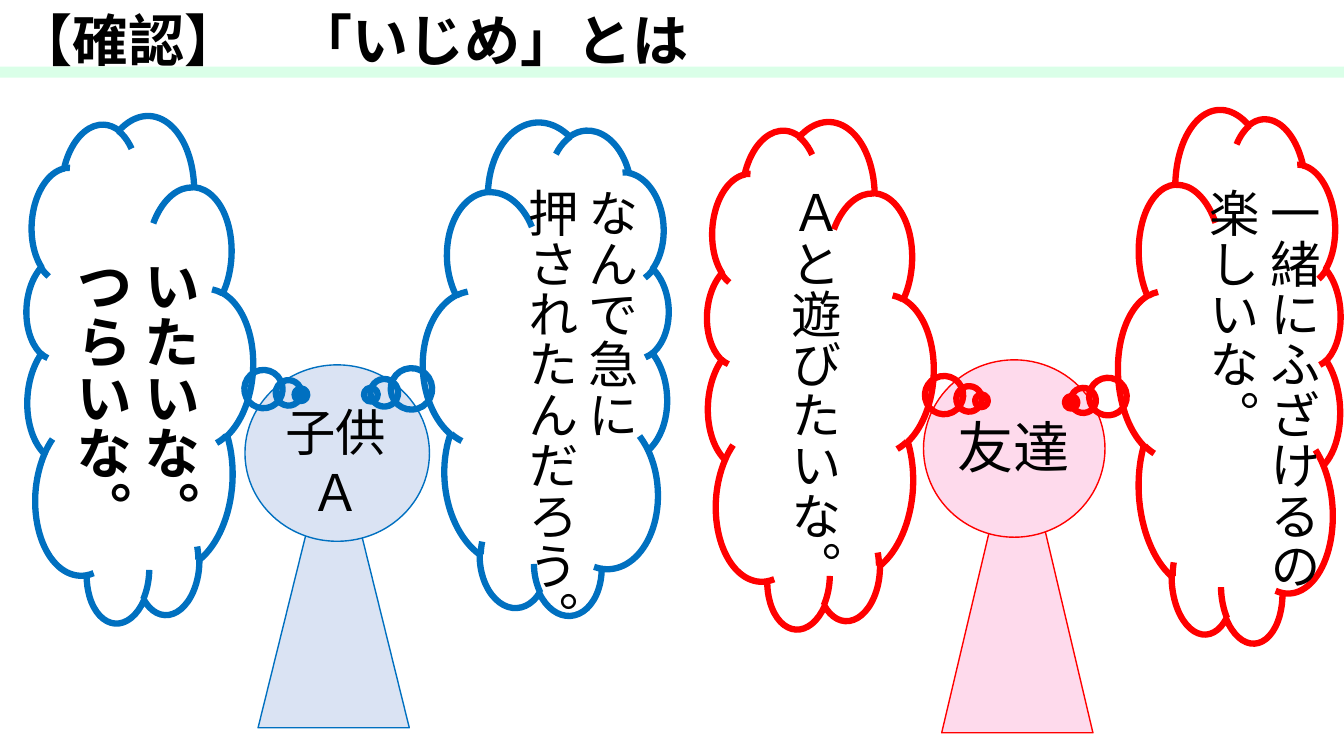
from dataclasses import dataclass

from lxml.etree import SubElement
from pptx import Presentation
from pptx.dml.color import RGBColor
from pptx.enum.shapes import MSO_SHAPE as Shape
from pptx.enum.text import MSO_ANCHOR as Anchor, MSO_AUTO_SIZE as AutoSize, PP_ALIGN as Align
from pptx.oxml.ns import qn
from pptx.util import Inches, Pt


@dataclass(frozen=True)
class Theme:
    font: str = "Noto Sans CJK JP"
    text: str = "000000"
    blue: str = "0070C0"
    pale_blue: str = "DAE3F3"
    red: str = "FF0000"
    pale_pink: str = "FEDAEC"
    band: str = "3BFF8A"
    band_opacity: int = 19
    large: int = 40
    medium: int = 36
    thin: float = 1
    thick: float = 4.5


class SlideBuilder:
    def __init__(self, deck, theme):
        self.theme = theme
        self.slide = deck.slides.add_slide(deck.slide_layouts[6])

    def shape(self, kind, at, fill=None, line=None, width=0):
        shape = self.slide.shapes.add_shape(kind, *map(Inches, at))
        shape.shadow.inherit = False
        if fill:
            shape.fill.solid()
            shape.fill.fore_color.rgb = RGBColor.from_string(fill)
        else:
            shape.fill.background()
        if line:
            shape.line.color.rgb = RGBColor.from_string(line)
            shape.line.width = Pt(width)
        else:
            shape.line.fill.background()
        return shape

    def text(self, at, lines, size, bold=False, align=None, vertical=False):
        box = self.slide.shapes.add_textbox(*map(Inches, at))
        frame = box.text_frame
        frame.text = "\n".join(lines)
        frame.word_wrap = True
        frame.auto_size = AutoSize.SHAPE_TO_FIT_TEXT
        if vertical:
            frame._txBody.bodyPr.set("vert", "eaVert")
        for para in frame.paragraphs:
            para.alignment = align
            for span in para.runs:
                font = span.font
                font.name, font.size, font.bold = self.theme.font, Pt(size), bold
                font.color.rgb = RGBColor.from_string(self.theme.text)
                east_asian = SubElement(font._element, qn("a:ea"))
                east_asian.set("typeface", self.theme.font)
        return box

    def title(self, at, wording):
        frame = self.text(at, [wording], self.theme.large, bold=True).text_frame
        frame.auto_size = AutoSize.NONE
        frame.vertical_anchor = Anchor.MIDDLE

    def band(self, at):
        """Draw the translucent strip under the title."""
        strip = self.shape(Shape.RECTANGLE, at, self.theme.band)
        color = strip._element.spPr.find(qn("a:solidFill"))[0]
        SubElement(color, qn("a:alpha")).set("val", str(self.theme.band_opacity * 1000))

    def person(self, body, head, label, name, size, fill, line):
        self.shape(Shape.FLOWCHART_EXTRACT, body, fill, line, self.theme.thin)
        self.shape(Shape.OVAL, head, fill, line, self.theme.thin)
        self.text(label, name, size, align=Align.CENTER)

    def thought(self, cloud, words, lines, line, size, bold=False, mirrored=False):
        """Draw an upright cloud; a mirrored one has its bubbles on the left."""
        shape = self.shape(Shape.CLOUD_CALLOUT, cloud, line=line, width=self.theme.thick)
        shape.adjustments[0], shape.adjustments[1] = -0.029, 0.718
        shape.rotation = 86.5 if mirrored else 273.5
        if mirrored:
            shape._element.spPr.find(qn("a:xfrm")).set("flipH", "1")
        self.text(words, lines, size, bold, vertical=True)


def main():
    deck = Presentation()
    deck.slide_width, deck.slide_height = Inches(13.33), Inches(7.5)
    theme = Theme()
    page = SlideBuilder(deck, theme)

    page.title((0.07, 0, 7.56, 0.77), "【確認】\u3000「いじめ」とは".replace("\u3000", "　"))

    page.person((2.56, 4.19, 1.5, 3.03), (2.43, 3.62, 1.83, 1.75), (2.69, 3.93, 1.28, 1.31),
                ["子供", "Ａ"], theme.medium, theme.pale_blue, theme.blue)
    page.thought((2.99, 2.43, 4.9, 2.47), (5.01, 1.77, 1.41, 4.33),
                 ["なんで急に", "押されたんだろう。"], theme.blue, theme.medium, mirrored=True)
    page.thought((-1.16, 2.53, 5.04, 2.28), (0.52, 2.46, 1.55, 2.95),
                 ["いたいな。", "つらいな。"], theme.blue, theme.large, bold=True)

    page.person((9.34, 4.1, 1.5, 3.17), (9.16, 3.57, 1.8, 1.76), (9.3, 4.04, 1.5, 0.77),
                ["友達"], theme.large, theme.pale_pink, theme.red)
    page.thought((9.57, 2.62, 5.3, 2.24), (11.89, 1.77, 1.29, 4.23),
                 ["一緒にふざけるの", "楽しいな。"], theme.red, theme.medium, mirrored=True)
    page.thought((5.59, 2.59, 5.04, 2.28), (7.62, 1.77, 0.81, 4.33),
                 ["Ａと遊びたいな。"], theme.red, theme.medium)

    page.band((0, 0.66, 13.33, 0.11))
    deck.save("out.pptx")


if __name__ == "__main__":
    main()
